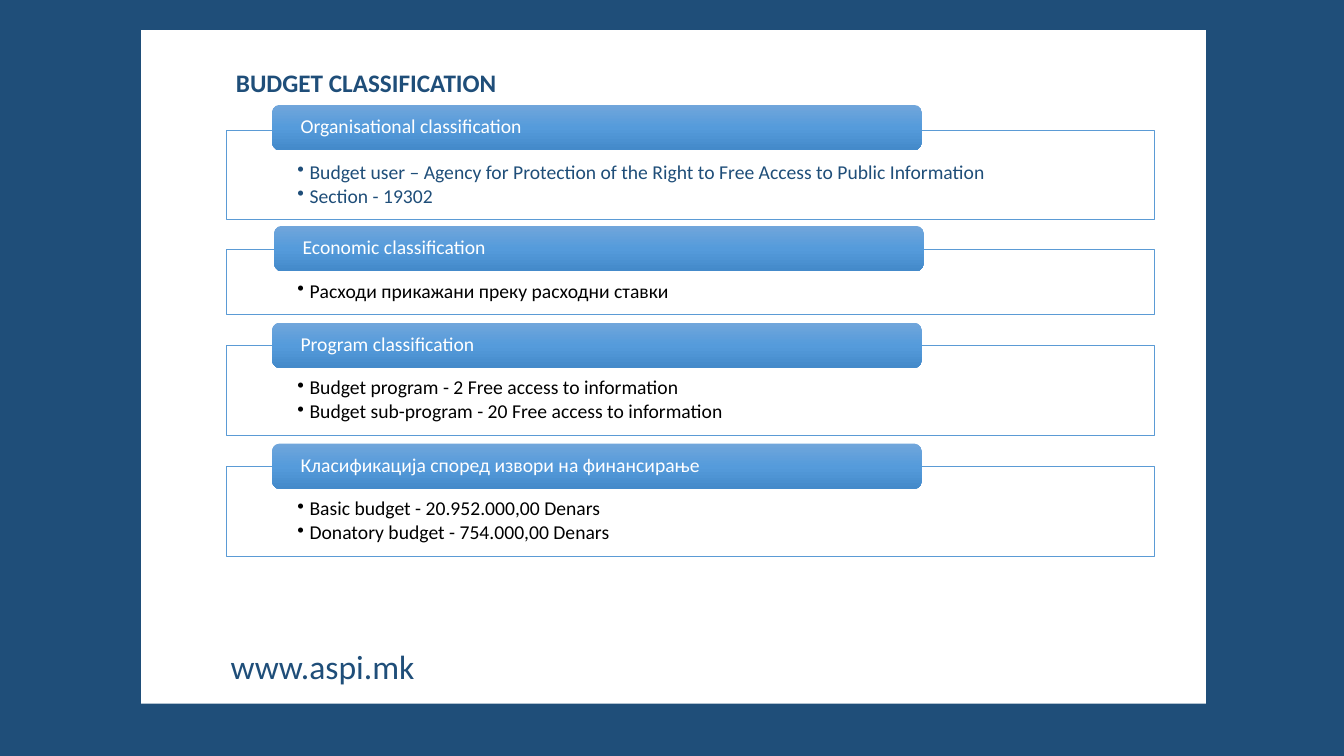
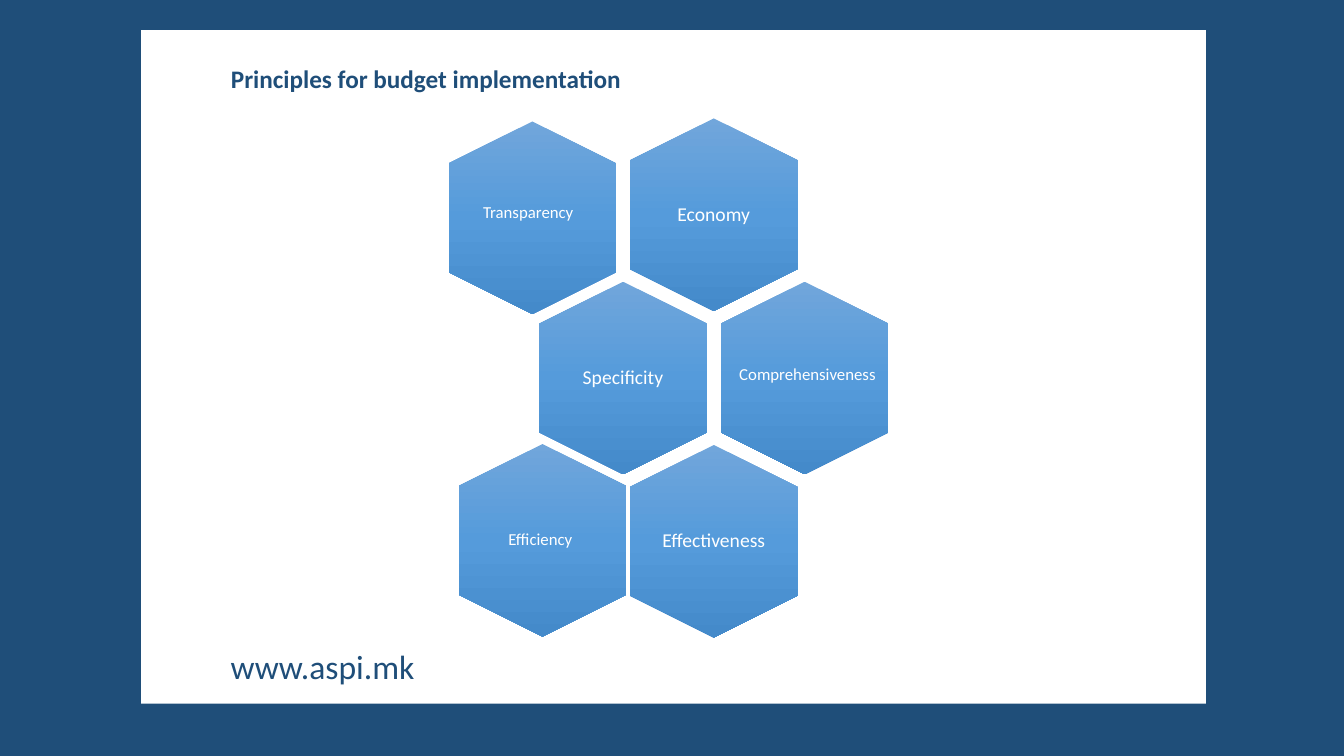
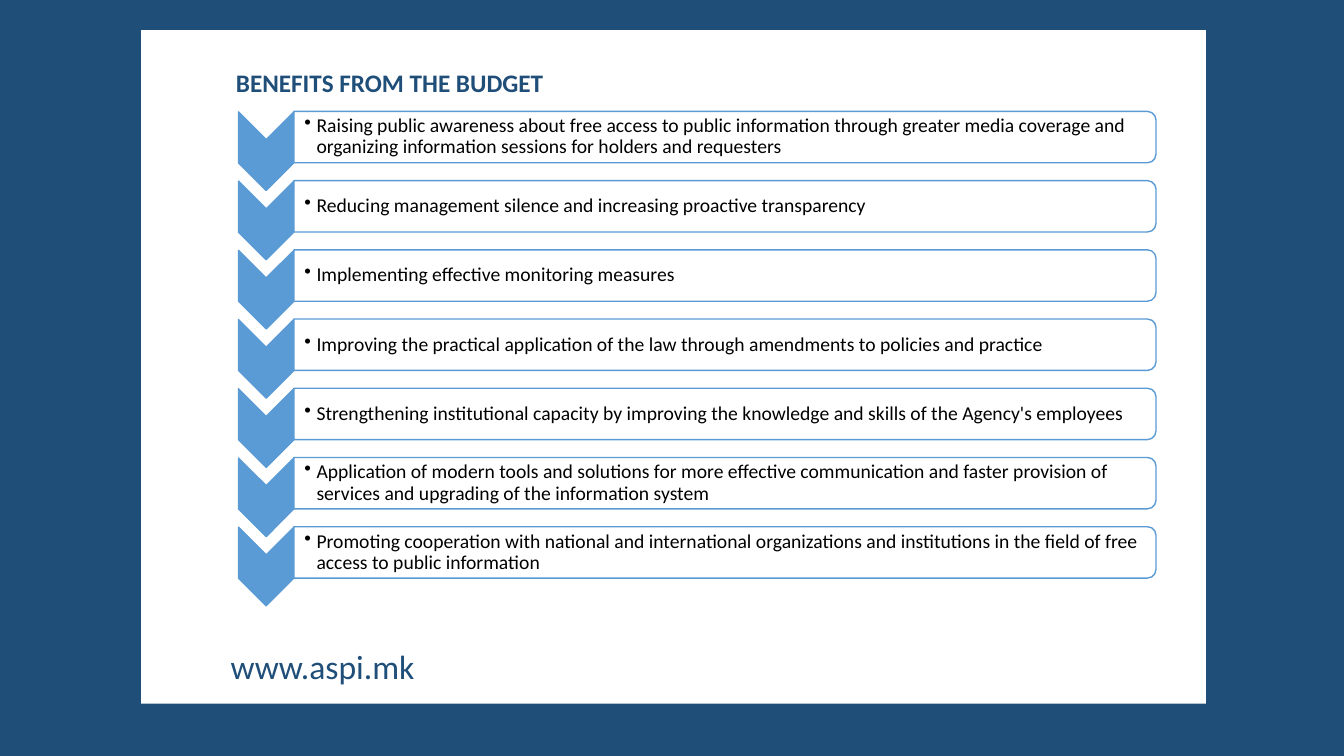
from dataclasses import dataclass

from lxml import etree
from pptx import Presentation
from pptx.dml.color import RGBColor
from pptx.enum.shapes import MSO_SHAPE
from pptx.enum.text import MSO_ANCHOR, MSO_AUTO_SIZE, PP_ALIGN
from pptx.oxml.ns import qn
from pptx.util import Inches, Pt

RECTANGLE = MSO_SHAPE.RECTANGLE
ROUNDED = MSO_SHAPE.ROUNDED_RECTANGLE
ROUNDED_TOP = MSO_SHAPE.ROUND_2_SAME_RECTANGLE
HEXAGON = MSO_SHAPE.HEXAGON
CHEVRON = MSO_SHAPE.CHEVRON
TOP, MIDDLE = MSO_ANCHOR.TOP, MSO_ANCHOR.MIDDLE
LEFT, CENTER = PP_ALIGN.LEFT, PP_ALIGN.CENTER


@dataclass(frozen=True)
class Theme:
    font: str = "Calibri"
    navy: str = "1F4E79"
    blue: str = "5B9BD5"
    white: str = "FFFFFF"
    black: str = "000000"
    gradient: tuple = ((0, "71A6DB"), (50, "559BDB"), (100, "448ACA"))
    footer_size: int = 24
    title_size: int = 18
    text_size: int = 14
    small_size: int = 12


THEME = Theme()


@dataclass(frozen=True)
class Section:
    heading: str
    items: tuple
    top: float
    height: float
    header_top: float
    header_left: float = 2.7
    color: str = THEME.black


@dataclass(frozen=True)
class Principle:
    label: str
    center_x: float
    center_y: float
    size: int = THEME.text_size
    shift_x: float = 0
    shift_y: float = 0


SECTIONS = (
    Section("Organisational classification",
            ("Budget user – Agency for Protection of the Right to Free Access to Public Information",
             "Section - 19302"), 1.29, 0.89, 1.04, color=THEME.navy),
    Section("Economic classification",
            ("Расходи прикажани преку расходни ставки",), 2.47, 0.65, 2.24, 2.72),
    Section("Program classification",
            ("Budget program - 2 Free access to information",
             "Budget sub-program - 20 Free access to information"), 3.43, 0.89, 3.2),
    Section("Класификација според извори на финансирање",
            ("Basic budget - 20.952.000,00 Denars",
             "Donatory budget - 754.000,00 Denars"), 4.63, 0.89, 4.4),
)

PRINCIPLES = (
    Principle("Economy", 7.08, 2.13),
    Principle("Transparency", 5.28, 2.16, THEME.small_size, -0.04, -0.05),
    Principle("Specificity", 6.18, 3.75),
    Principle("Comprehensiveness", 7.98, 3.75, THEME.small_size, 0.03, -0.03),
    Principle("Effectiveness", 7.08, 5.37),
    Principle("Efficiency", 5.38, 5.36, THEME.small_size, -0.02),
)

BENEFITS = (
    "Raising public awareness about free access to public information through greater media "
    "coverage and organizing information sessions for holders and requesters",
    "Reducing management silence and increasing proactive transparency",
    "Implementing effective monitoring measures",
    "Improving the practical application of the law through amendments to policies and practice",
    "Strengthening institutional capacity by improving the knowledge and skills of the Agency's employees",
    "Application of modern tools and solutions for more effective communication and faster "
    "provision of services and upgrading of the information system",
    "Promoting cooperation with national and international organizations and institutions "
    "in the field of free access to public information",
)


# Text and shape helpers
def add_bullet(paragraph) -> None:
    properties = paragraph._p.get_or_add_pPr()
    properties.set("marL", str(Inches(0.12)))
    properties.set("indent", str(-Inches(0.12)))
    etree.SubElement(properties, qn("a:buChar")).set("char", "•")


def write(shape, lines: tuple, size: int, color: str, *, bold: bool = False,
          bullets: bool = False, align=LEFT, anchor=MIDDLE, spacing: float = 0.9,
          insets: tuple = (0, 0, 0, 0)) -> None:
    frame = shape.text_frame
    frame.text = "\n".join(lines)
    frame.word_wrap = True
    frame.auto_size = MSO_AUTO_SIZE.NONE
    frame.vertical_anchor = anchor
    (frame.margin_left, frame.margin_top,
     frame.margin_right, frame.margin_bottom) = (Inches(inset) for inset in insets)
    for paragraph in frame.paragraphs:
        if bullets:
            add_bullet(paragraph)
        paragraph.alignment = align
        paragraph.line_spacing = spacing
        paragraph.space_before = Pt(0)
        paragraph.space_after = Pt(2 if bullets else 0)
        for run in paragraph.runs:
            run.font.name = THEME.font
            run.font.size = Pt(size)
            run.font.bold = bold
            run.font.color.rgb = RGBColor.from_string(color)


def add_box(page, left: float, top: float, width: float, height: float):
    return page.shapes.add_textbox(Inches(left), Inches(top), Inches(width), Inches(height))


def add_figure(page, kind, left: float, top: float, width: float, height: float,
               fill: str = THEME.white, line: str = "", weight: float = 1):
    shape = page.shapes.add_shape(kind, Inches(left), Inches(top), Inches(width), Inches(height))
    shape.shadow.inherit = False
    shape.fill.solid()
    shape.fill.fore_color.rgb = RGBColor.from_string(fill)
    if line:
        shape.line.color.rgb = RGBColor.from_string(line)
        shape.line.width = Pt(weight)
    else:
        shape.line.fill.background()
    return shape


def add_turned(page, kind, center_x: float, center_y: float, length: float, breadth: float,
               **style):
    """Add a shape turned a quarter, placed by its centre."""
    shape = add_figure(page, kind, center_x - length / 2, center_y - breadth / 2,
                       length, breadth, **style)
    shape.rotation = 90
    return shape


def shade(shape) -> None:
    """Fill with the theme gradient, always running down the page."""
    shape.fill.gradient()
    gradient = shape._element.spPr.find(qn("a:gradFill"))
    gradient.set("rotWithShape", "0")
    for child in list(gradient):
        gradient.remove(child)
    stops = etree.SubElement(gradient, qn("a:gsLst"))
    for position, color in THEME.gradient:
        stop = etree.SubElement(stops, qn("a:gs"), pos=str(position * 1000))
        etree.SubElement(stop, qn("a:srgbClr"), val=color)
    etree.SubElement(gradient, qn("a:lin"), ang="5400000", scaled="0")


# Shared frame and titles
def build_frame(deck, layout, page) -> None:
    """Set the background and move the panel and web address into the layout."""
    background = deck.slide_master.background.fill
    background.solid()
    background.fore_color.rgb = RGBColor.from_string(THEME.navy)
    panel = add_figure(page, RECTANGLE, 1.4, 0.3, 10.56, 6.68)
    footer = add_box(page, 2.19, 6.36, 2.4, 0.5)
    write(footer, ("www.aspi.mk",), THEME.footer_size, THEME.navy, anchor=TOP,
          spacing=1, insets=(0.1, 0.05, 0.1, 0.05))
    for shape in (panel, footer):
        layout.shapes.element.append(shape.element)


def set_title(page, text: str, left: float = 2.24, top: float = 0.62) -> None:
    title = page.shapes.title
    title.left, title.top = Inches(left), Inches(top)
    title.width, title.height = Inches(9), Inches(0.4)
    write(title, (text,), THEME.title_size, THEME.navy, bold=True, anchor=TOP,
          spacing=1, insets=(0.1, 0.05, 0.1, 0.05))


# Slide contents
def add_section(page, section: Section) -> None:
    panel = add_figure(page, RECTANGLE, 2.24, section.top, 9.21, section.height,
                       line=THEME.blue, weight=0.5)
    write(panel, section.items, THEME.text_size, section.color, bullets=True,
          anchor=TOP, insets=(0.71, 0.32, 0.71, 0.11))
    header = add_figure(page, ROUNDED, section.header_left, section.header_top, 6.44, 0.45)
    shade(header)
    write(header, (section.heading,), THEME.text_size, THEME.white,
          insets=(0.26, 0, 0.26, 0))


def add_principle(page, principle: Principle) -> None:
    length, breadth = 1.91, 1.66
    hexagon = add_turned(page, HEXAGON, principle.center_x, principle.center_y, length, breadth)
    hexagon.adjustments[0] = 0.25
    shade(hexagon)
    label = add_box(page, principle.center_x + principle.shift_x - breadth / 2,
                    principle.center_y + principle.shift_y - 0.2, breadth, 0.4)
    write(label, (principle.label,), principle.size, THEME.white, align=CENTER)


def add_benefit(page, text: str, center_y: float) -> None:
    add_turned(page, CHEVRON, 2.64, center_y + 0.14, 0.78, 0.55,
               fill=THEME.blue, line=THEME.blue)
    add_turned(page, ROUNDED_TOP, 7.19, center_y, 0.51, 8.55, line=THEME.blue)
    box = add_box(page, 2.91, center_y - 0.23, 8.53, 0.46)
    write(box, (text,), THEME.text_size, THEME.black, bullets=True,
          insets=(0.11, 0.01, 0.01, 0.01))


def main() -> None:
    deck = Presentation()
    deck.slide_width, deck.slide_height = Inches(13.33), Inches(7.5)
    layout = deck.slide_layouts.get_by_name("Title Only")

    # Budget classification
    page = deck.slides.add_slide(layout)
    build_frame(deck, layout, page)
    set_title(page, "BUDGET CLASSIFICATION")
    for section in SECTIONS:
        add_section(page, section)

    # Principles
    page = deck.slides.add_slide(layout)
    set_title(page, "Principles for budget implementation", 2.19, 0.58)
    for principle in PRINCIPLES:
        add_principle(page, principle)

    # Benefits, evenly spaced from first to last row
    page = deck.slides.add_slide(layout)
    set_title(page, "BENEFITS FROM THE BUDGET")
    first, last = 1.36, 5.48
    step = (last - first) / (len(BENEFITS) - 1)
    for index, benefit in enumerate(BENEFITS):
        add_benefit(page, benefit, first + index * step)

    deck.save("out.pptx")


if __name__ == "__main__":
    main()
